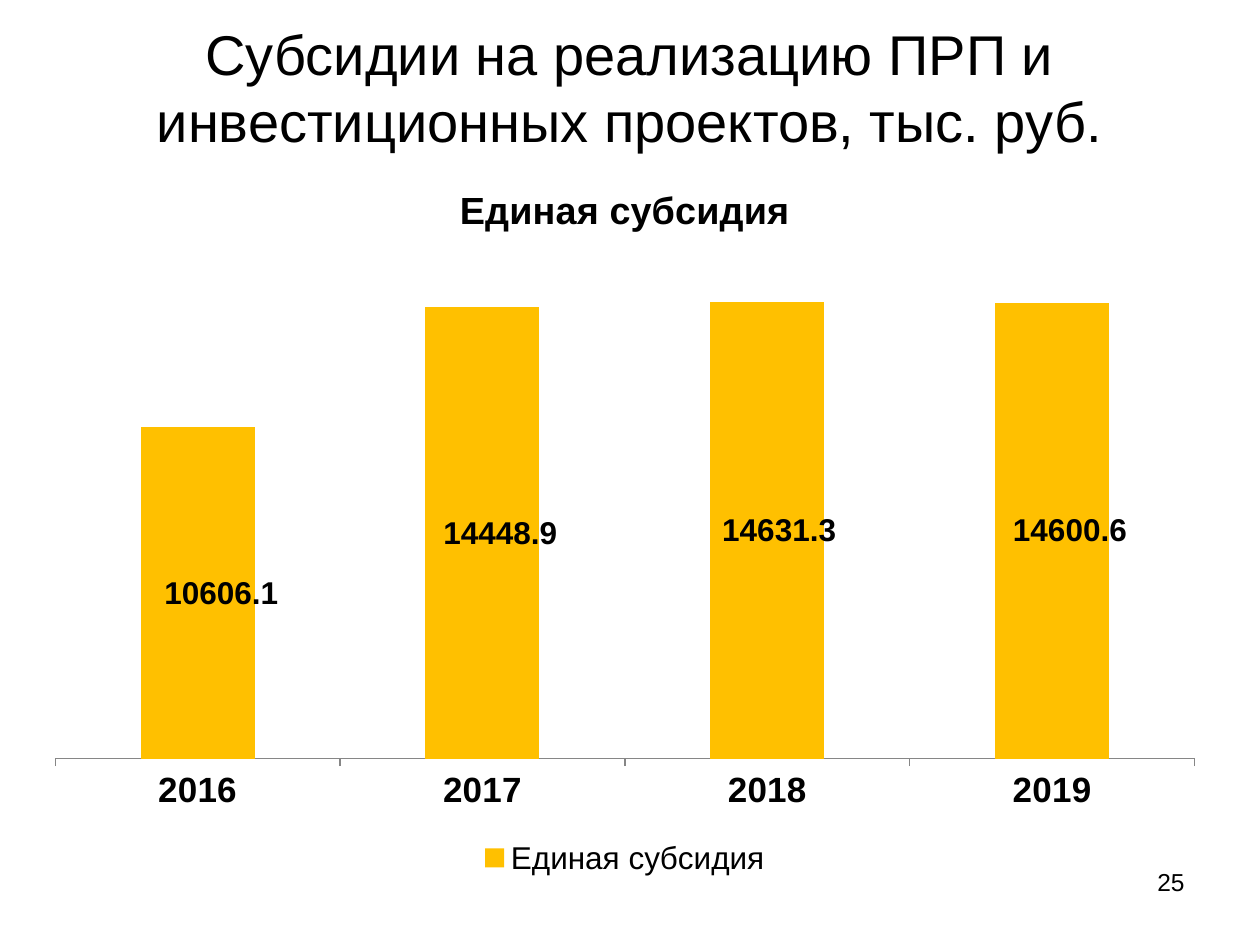
import pptx
import pptx.util
import pptx.chart.data
import pptx.dml.color
import pptx.enum.chart
import pptx.enum.text
import pptx.oxml
import pptx.oxml.ns

Inches = pptx.util.Inches
ALIGN = pptx.enum.text.PP_ALIGN
ANCHOR = pptx.enum.text.MSO_ANCHOR

# Content
TITLE = "Субсидии на реализацию ПРП и инвестиционных проектов, тыс. руб."
PAGE_NUMBER = "25"
SERIES_NAME = "Единая субсидия"
# year, subsidy, label shift as a share of the chart width
SUBSIDIES = [
    ("2016", 10606.1, 0.02),
    ("2017", 14448.9, 0.015),
    ("2018", 14631.3, 0.01),
    ("2019", 14600.6, 0.015),
]
PLOT_AREA = {"x": 0.02, "y": 0.14, "w": 0.96, "h": 0.69}
BLACK, AMBER, GRAY = "000000", "FFC000", "868686"


def color(value):
    return pptx.dml.color.RGBColor.from_string(value)


def style_font(font, size, bold=False):
    font.name = "Arial"
    font.size = pptx.util.Pt(size)
    font.bold = bold
    font.color.rgb = color(BLACK)


def add_text(slide, box, text, size, align, anchor):
    shape = slide.shapes.add_textbox(*[Inches(length) for length in box])
    frame = shape.text_frame
    frame.word_wrap = True
    frame.vertical_anchor = anchor
    paragraph = frame.paragraphs[0]
    paragraph.alignment = align
    run = paragraph.add_run()
    run.text = text
    style_font(run.font, size)


def manual_layout(values, inner=False):
    target = '<c:layoutTarget val="inner"/>' if inner else ""
    modes = '<c:xMode val="edge"/><c:yMode val="edge"/>' if inner else ""
    places = "".join(f'<c:{key} val="{value}"/>' for key, value in values.items())
    return pptx.oxml.parse_xml(
        f'<c:layout {pptx.oxml.ns.nsdecls("c")}><c:manualLayout>'
        f"{target}{modes}{places}</c:manualLayout></c:layout>"
    )


def add_subsidy_chart(slide):
    data = pptx.chart.data.CategoryChartData()
    data.categories = [year for year, _, _ in SUBSIDIES]
    data.add_series(SERIES_NAME, [amount for _, amount, _ in SUBSIDIES])
    chart = slide.shapes.add_chart(
        pptx.enum.chart.XL_CHART_TYPE.COLUMN_STACKED,
        Inches(0.25), Inches(1.25), Inches(9.42), Inches(5.75), data,
    ).chart
    style_font(chart.font, 18)

    # Title and legend
    chart.has_title = True
    run = chart.chart_title.text_frame.paragraphs[0].add_run()
    run.text = SERIES_NAME
    style_font(run.font, 21.6, bold=True)
    chart.has_legend = True
    chart.legend.position = pptx.enum.chart.XL_LEGEND_POSITION.BOTTOM
    chart.legend.include_in_layout = False
    style_font(chart.legend.font, 18)

    # Axes
    chart.value_axis.visible = False
    chart.value_axis.has_major_gridlines = False
    chart.value_axis.minimum_scale = 0
    chart.value_axis.maximum_scale = 16000
    axis = chart.category_axis
    axis.major_tick_mark = pptx.enum.chart.XL_TICK_MARK.OUTSIDE
    axis.format.line.color.rgb = color(GRAY)
    style_font(axis.tick_labels.font, 20, bold=True)

    # Columns and their shifted labels
    plot = chart.plots[0]
    plot.vary_by_categories = False
    plot.gap_width = 150
    plot.overlap = 100
    series = plot.series[0]
    series.format.fill.solid()
    series.format.fill.fore_color.rgb = color(AMBER)
    series.data_labels.show_value = True
    style_font(series.data_labels.font, 18, bold=True)
    for index in range(len(SUBSIDIES)):
        style_font(series.points[index].data_label.font, 18, bold=True)
    label_tag = pptx.oxml.ns.qn("c:dLbl")
    labels = list(series._element.iter(label_tag))
    for label, (_, _, shift) in zip(labels, SUBSIDIES):
        label.insert(1, manual_layout({"x": shift, "y": 0}))

    # Plot area
    area = chart._chartSpace.find(".//" + pptx.oxml.ns.qn("c:plotArea"))
    for layout in area.findall(pptx.oxml.ns.qn("c:layout")):
        area.remove(layout)
    area.insert(0, manual_layout(PLOT_AREA, inner=True))


def main():
    presentation = pptx.Presentation()
    presentation.slide_width = Inches(10)
    presentation.slide_height = Inches(7.5)
    slide = presentation.slides.add_slide(presentation.slide_layouts[6])
    add_text(slide, (0.5, 0.3, 9, 0.78), TITLE, 32, ALIGN.CENTER, ANCHOR.MIDDLE)
    add_subsidy_chart(slide)
    add_text(slide, (7.17, 6.83, 2.33, 0.52), PAGE_NUMBER, 14, ALIGN.RIGHT, ANCHOR.TOP)
    presentation.save("out.pptx")


if __name__ == "__main__":
    main()
